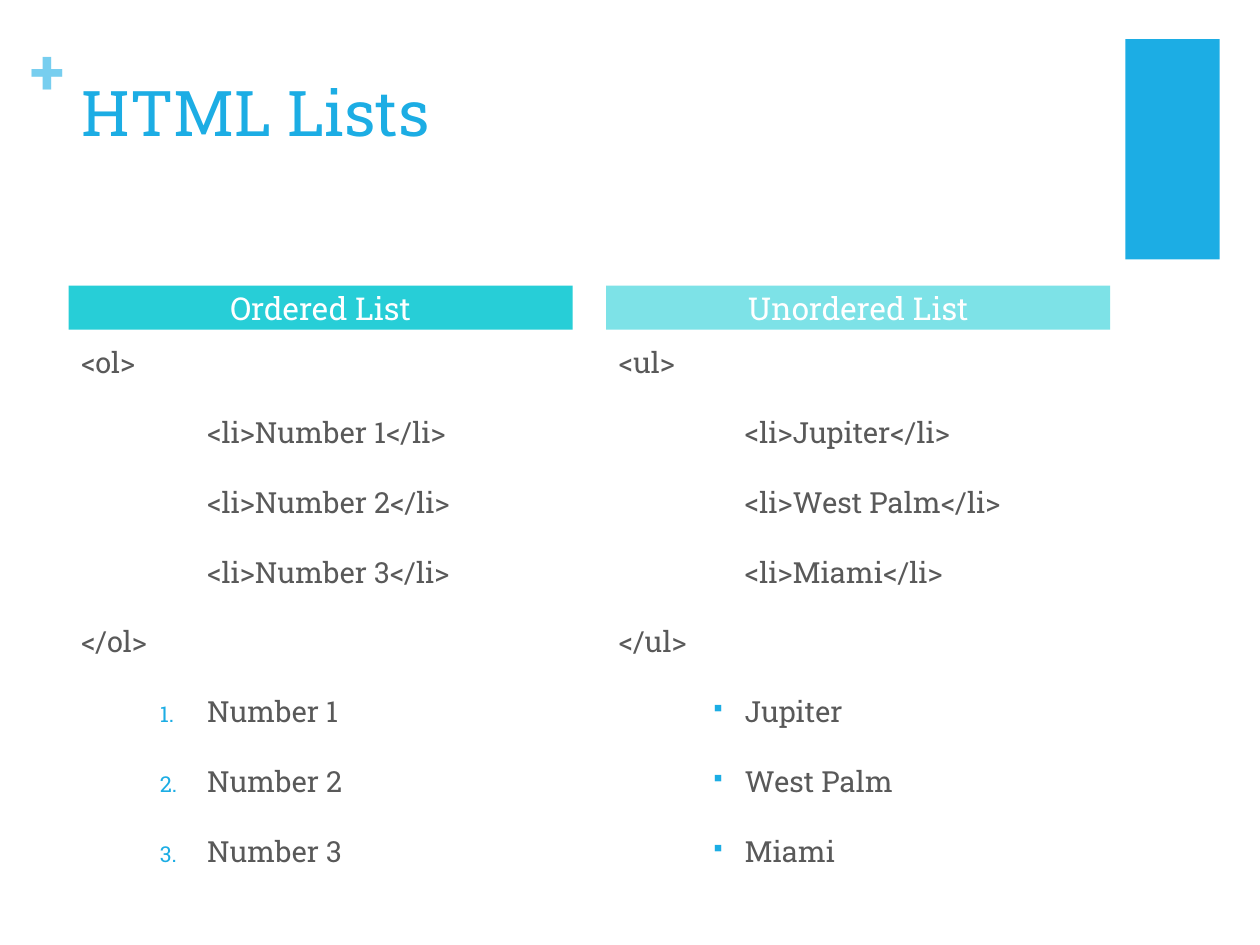
from dataclasses import dataclass

from lxml import etree
from pptx import Presentation
from pptx.dml.color import RGBColor
from pptx.enum.shapes import MSO_SHAPE
from pptx.enum.text import MSO_ANCHOR, PP_ALIGN
from pptx.oxml.ns import qn
from pptx.util import Pt

RECTANGLE = MSO_SHAPE.RECTANGLE
MIDDLE = MSO_ANCHOR.MIDDLE
CENTER = PP_ALIGN.CENTER


@dataclass(frozen=True)
class Theme:
    """Colours, fonts and type sizes of the slide."""

    font: str = "Roboto Slab"
    bullet_font: str = "Wingdings"
    accent: str = "1CADE4"
    accent_light: str = "77CEEF"
    ordered: str = "27CED7"
    unordered: str = "7DE2E7"
    body: str = "595959"
    white: str = "FFFFFF"
    title_size: float = 36
    header_size: float = 18
    body_size: float = 16.6


THEME = Theme()


def style_paragraph(paragraph, size, color, bold=False):
    """Apply the theme font, a size and a colour to every run."""
    for run in paragraph.runs:
        run.font.name = THEME.font
        run.font.size = Pt(size)
        run.font.bold = bold
        run.font.color.rgb = RGBColor.from_string(color)


def add_block(slide, box, color):
    """Place a plain filled rectangle in the box."""
    block = slide.shapes.add_shape(RECTANGLE, *map(Pt, box))
    block.shadow.inherit = False
    block.fill.solid()
    block.fill.fore_color.rgb = RGBColor.from_string(color)
    block.line.fill.background()
    return block


def add_text(slide, box, lines):
    """Place a wrapping text box with one paragraph per line."""
    frame = slide.shapes.add_textbox(*map(Pt, box)).text_frame
    frame.word_wrap = True
    frame.text = "\n".join(lines)
    return frame


def set_tab_stop(paragraph, position):
    """Give a paragraph one left tab stop."""
    stops = etree.SubElement(paragraph._p.get_or_add_pPr(), qn("a:tabLst"))
    etree.SubElement(stops, qn("a:tab"), pos=str(Pt(position)), algn="l")


def set_bullet(paragraph, hanging, font, tag, **attributes):
    """Give a paragraph a hanging accent-coloured bullet or number."""
    properties = paragraph._p.get_or_add_pPr()
    properties.set("marL", str(Pt(72)))
    properties.set("indent", str(-Pt(hanging)))
    color = etree.SubElement(properties, qn("a:buClr"))
    etree.SubElement(color, qn("a:srgbClr"), val=THEME.accent)
    etree.SubElement(properties, qn("a:buSzPct"), val="75000")
    etree.SubElement(properties, qn("a:buFont"), typeface=font)
    etree.SubElement(properties, qn(tag), **attributes)


def add_heading(slide, box, title):
    """Place the title with the plus sign at its upper left."""
    left, top, width, height = box
    plus = add_text(slide, (left - 22, top - 20, 21, 44), ["+"])
    plus.margin_left = plus.margin_right = plus.margin_top = plus.margin_bottom = 0
    style_paragraph(plus.paragraphs[0], THEME.title_size, THEME.accent_light, True)
    heading = add_text(slide, box, [title])
    style_paragraph(heading.paragraphs[0], THEME.title_size, THEME.accent)


def add_list_column(slide, box, title, color, tag, items, hanging, bullet):
    """Place a header bar, the list markup and the list it produces."""
    left, top, width, height = box
    header = add_block(slide, (left, top, width, 25.2), color).text_frame
    header.text = title
    header.vertical_anchor = MIDDLE
    header.margin_top = header.margin_bottom = 0
    header.paragraphs[0].alignment = CENTER
    style_paragraph(header.paragraphs[0], THEME.header_size, THEME.white)

    markup = [f"<{tag}>", *(f"\t<li>{item}</li>" for item in items), f"</{tag}>"]
    content = add_text(slide, (left, top + 30, width, height - 30), markup + items)
    for paragraph in content.paragraphs:
        paragraph.space_before = Pt(20)
        style_paragraph(paragraph, THEME.body_size, THEME.body)
    for paragraph in content.paragraphs[:len(markup)]:
        set_tab_stop(paragraph, 72)
    for paragraph in content.paragraphs[len(markup):]:
        set_bullet(paragraph, hanging, **bullet)


def main():
    """Build and save the slide."""
    presentation = Presentation()
    presentation.slide_width, presentation.slide_height = Pt(720), Pt(540)
    slide = presentation.slides.add_slide(presentation.slide_layouts[6])
    add_block(slide, (643, 22.3, 54, 126), THEME.accent)
    add_heading(slide, (39.6, 38.2, 594.7, 87.8), "HTML Lists")
    columns = [
        ("Ordered List", THEME.ordered, "ol", ["Number 1", "Number 2", "Number 3"],
         27, {"font": THEME.font, "tag": "a:buAutoNum", "type": "arabicPeriod"}),
        ("Unordered List", THEME.unordered, "ul", ["Jupiter", "West Palm", "Miami"],
         18, {"font": THEME.bullet_font, "tag": "a:buChar", "char": "§"}),
    ]
    for index, column in enumerate(columns):
        add_list_column(slide, (39.25 + index * 307.2, 163.2, 288, 319.4), *column)
    presentation.save("out.pptx")


if __name__ == "__main__":
    main()
